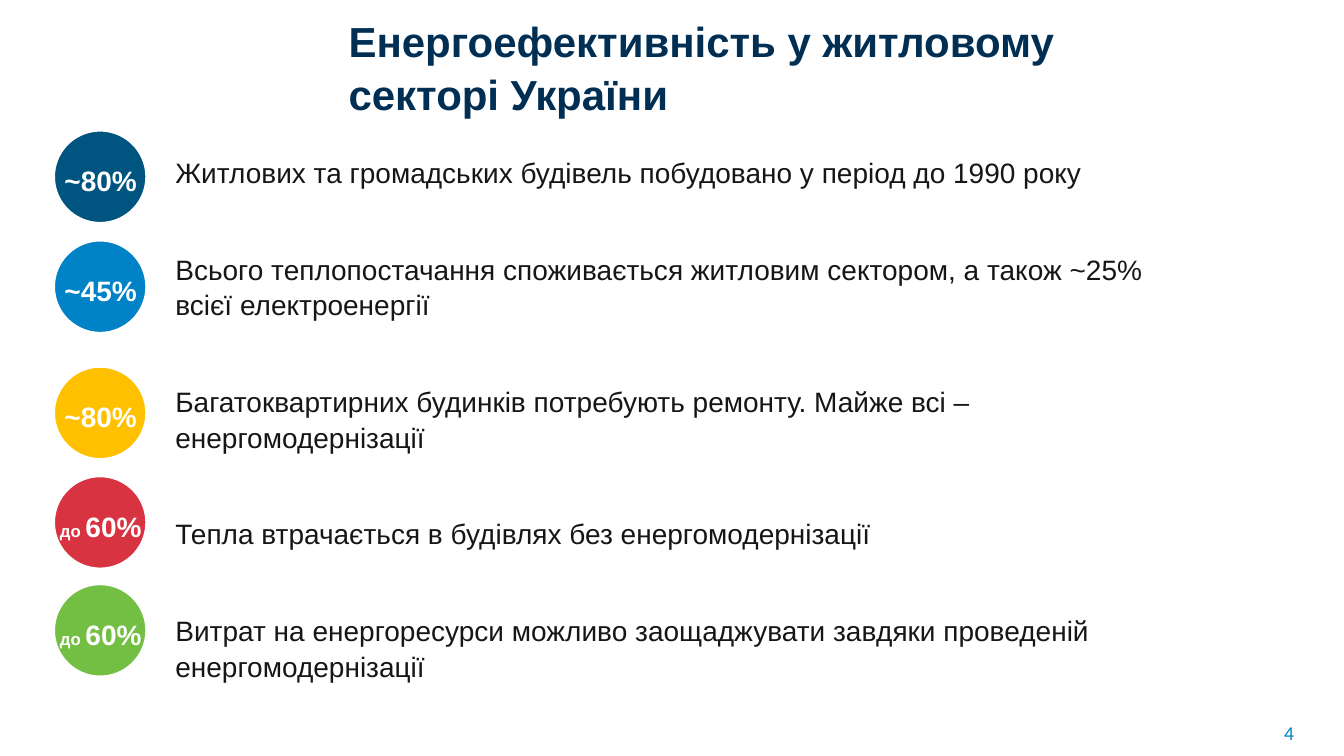
"""Build the slide on energy efficiency in Ukraine's housing sector."""
from pptx import Presentation
from pptx import util as u
from pptx.dml.color import RGBColor
from pptx.enum import shapes, text

WHITE = "FFFFFF"
facts = [
    (3.3, "005480", "", "~80%",
     "Житлових та громадських будівель побудовано у період до 1990 року"),
    (6.07, "0082C6", "", "~45%",
     "Всього теплопостачання споживається житловим сектором, а також ~25% всієї електроенергії"),
    (9.25, "FFC000", "", "~80%",
     "Багатоквартирних будинків потребують ремонту. Майже всі – енергомодернізації"),
    (12.01, "D83340", "до ", "60%",
     "Тепла втрачається в будівлях без енергомодернізації"),
    (14.73, "72BF44", "до ", "60%",
     "Витрат на енергоресурси можливо заощаджувати завдяки проведеній енeргомодернізації"),
]


def tint(code):
    return RGBColor.from_string(code)


def write(para, words, size, code, bold=False, face="Arial"):
    run = para.add_run()
    run.text = words
    font = run.font
    font.name, font.size, font.bold = face, u.Pt(size), bold
    font.color.rgb = tint(code)
    para.line_spacing = 1.05


deck = Presentation()
deck.slide_width, deck.slide_height = u.Cm(33.87), u.Cm(19.05)
slide = deck.slides.add_slide(deck.slide_layouts[5])

title = slide.shapes.title
title.left, title.top = u.Cm(8.53), u.Cm(0.2)
title.width, title.height = u.Cm(22.12), u.Cm(2.82)
frame = title.text_frame
frame.auto_size = text.MSO_AUTO_SIZE.NONE
frame.vertical_anchor = text.MSO_ANCHOR.TOP
para = frame.paragraphs[0]
para.alignment = text.PP_ALIGN.LEFT
para.space_before = u.Pt(0)
write(para, "Енергоефективність у житловому секторі України", 30, "002F53", True)

for top, code, prefix, share, fact in facts:
    badge = slide.shapes.add_group_shape()
    disc = badge.shapes.add_shape(
        shapes.MSO_SHAPE.OVAL, u.Cm(1.37), u.Cm(top), u.Cm(2.31), u.Cm(2.31))
    disc.shadow.inherit = False
    disc.fill.solid()
    disc.fill.fore_color.rgb = tint(code)
    disc.line.color.rgb = tint(WHITE)
    disc.line.width = u.Pt(1)
    label = badge.shapes.add_textbox(
        u.Cm(0.89), u.Cm(top + 0.66), u.Cm(3.3), u.Cm(1.12))
    label.text_frame.word_wrap = True
    para = label.text_frame.paragraphs[0]
    para.alignment = text.PP_ALIGN.CENTER
    if prefix:
        write(para, prefix, 12, WHITE, True)
    write(para, share, 20, WHITE, True)

body = slide.shapes.add_textbox(u.Cm(4.17), u.Cm(3.76), u.Cm(25.45), u.Cm(13.36))
frame = body.text_frame
frame.word_wrap = True
for row, entry in enumerate(facts):
    para = frame.add_paragraph() if row else frame.paragraphs[0]
    para.space_after = u.Pt(44)
    write(para, entry[-1], 20, "161616")

page = slide.shapes.add_textbox(u.Cm(32.11), u.Cm(18.01), u.Cm(1.75), u.Cm(1.04))
page.text_frame.word_wrap = True
write(page.text_frame.paragraphs[0], "4", 14, "0082C6", face="Calibri")

deck.save("out.pptx")
